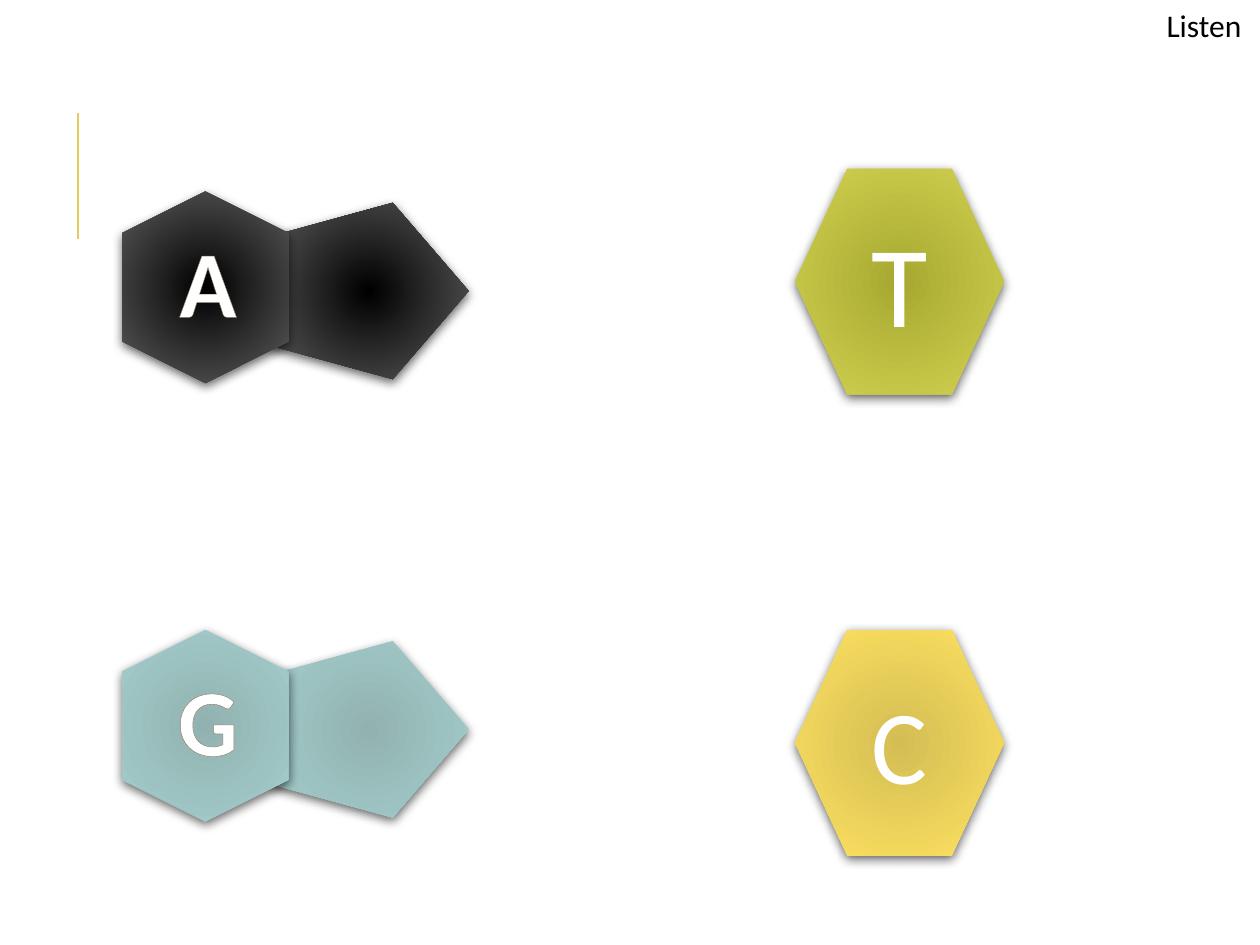
from lxml.etree import SubElement
from pptx import Presentation
from pptx.dml.color import RGBColor
from pptx.enum.shapes import MSO_CONNECTOR, MSO_SHAPE
from pptx.enum.text import MSO_ANCHOR, MSO_AUTO_SIZE, PP_ALIGN
from pptx.oxml import parse_xml
from pptx.oxml.ns import nsdecls, qn
from pptx.util import Inches, Pt

SINGLE_RINGS = [
    {"letter": "C", "top": 5, "size": 60, "colors": ("D4BE54", "FFE261")},
    {"letter": "T", "top": 1.34, "size": 66, "colors": ("A7A831", "D2D351")},
]
DOUBLE_RINGS = [
    {"letter": "A", "top": 1.52, "colors": ("000000", "5E5E5E")},
    {"letter": "G", "top": 5, "colors": ("92B2B1", "A3CECC")},
]
LETTER_FORMAT = {"size": Pt(54), "name": "Calibri", "bold": True}

RADIAL_PATH = (
    f'<a:path {nsdecls("a")} path="circle">'
    '<a:fillToRect l="100000" t="100000" r="100000" b="100000"/></a:path>'
)
SHADOW = (
    f'<a:effectLst {nsdecls("a")}>'
    f'<a:outerShdw blurRad="{Pt(6)}" dist="{Pt(2)}" dir="5400000" rotWithShape="0">'
    '<a:srgbClr val="000000"><a:alpha val="60000"/></a:srgbClr>'
    "</a:outerShdw></a:effectLst>"
)
LETTER_OUTLINE = (
    f'<a:ln {nsdecls("a")} w="{Pt(0.8)}"><a:solidFill>'
    '<a:srgbClr val="927C61"/></a:solidFill></a:ln>'
)


def color(value):
    return RGBColor.from_string(value)


def add_ring(shapes, kind, place, colors, rotation=0):
    ring = shapes.add_shape(kind, *map(Inches, place))
    ring.rotation = rotation
    ring.line.fill.background()
    ring.fill.gradient()
    for stop, value in zip(ring.fill.gradient_stops, colors):
        stop.color.rgb = color(value)
    properties = ring._element.spPr
    gradient = properties.find(qn("a:gradFill"))
    gradient.replace(gradient.find(qn("a:lin")), parse_xml(RADIAL_PATH))
    properties.append(parse_xml(SHADOW))
    return ring


def write(box, text, formats, text_color, align):
    para = box.text_frame.paragraphs[0]
    para.alignment = align
    span = para.add_run()
    span.text = text
    for name, value in formats.items():
        setattr(span.font, name, value)
    span.font.color.rgb = color(text_color)
    return span


def add_text_box(shapes, place, wrap):
    box = shapes.add_textbox(*map(Inches, place))
    box.text_frame.word_wrap = wrap
    box.text_frame.auto_size = MSO_AUTO_SIZE.SHAPE_TO_FIT_TEXT
    return box


def add_single_ring(page, base):
    place = (6.31, base["top"], 1.66, 1.79)
    ring = add_ring(page.shapes, MSO_SHAPE.HEXAGON, place, base["colors"])
    ring.text_frame.vertical_anchor = MSO_ANCHOR.MIDDLE
    formats = {"size": Pt(base["size"]), "name": "Calibri"}
    write(ring, base["letter"], formats, "FFFFFF", PP_ALIGN.CENTER)


def add_double_ring(page, base):
    top = base["top"]
    shapes = page.shapes.add_group_shape().shapes
    add_ring(shapes, MSO_SHAPE.REGULAR_PENTAGON, (2.23, top, 1.4, 1.58), base["colors"], 90)
    add_ring(shapes, MSO_SHAPE.HEXAGON, (0.87, top + 0.1, 1.52, 1.32), base["colors"], 90)
    box = add_text_box(shapes, (1.29, top + 0.2, 0.72, 1.01), False)
    span = write(box, base["letter"], LETTER_FORMAT, "FFFFFF", PP_ALIGN.CENTER)
    span.font._element.insert(0, parse_xml(LETTER_OUTLINE))


def main():
    deck = Presentation()
    deck.slide_width, deck.slide_height = Inches(10), Inches(7.5)
    page = deck.slides.add_slide(deck.slide_layouts[6])

    accent = page.shapes.add_connector(
        MSO_CONNECTOR.STRAIGHT, *map(Inches, (0.62, 1.9, 0.62, 0.9))
    )
    accent.line.color.rgb = color("E3CC5A")
    accent.line.width = Pt(1.5)
    SubElement(accent._element.spPr, qn("a:effectLst"))

    for base in SINGLE_RINGS:
        add_single_ring(page, base)
    for base in DOUBLE_RINGS:
        add_double_ring(page, base)

    listen = add_text_box(page.shapes, (9.16, 0, 0.95, 0.4), True)
    write(listen, "Listen", {"size": Pt(18), "name": "Calibri"}, "000000", PP_ALIGN.LEFT)

    deck.save("out.pptx")


if __name__ == "__main__":
    main()
